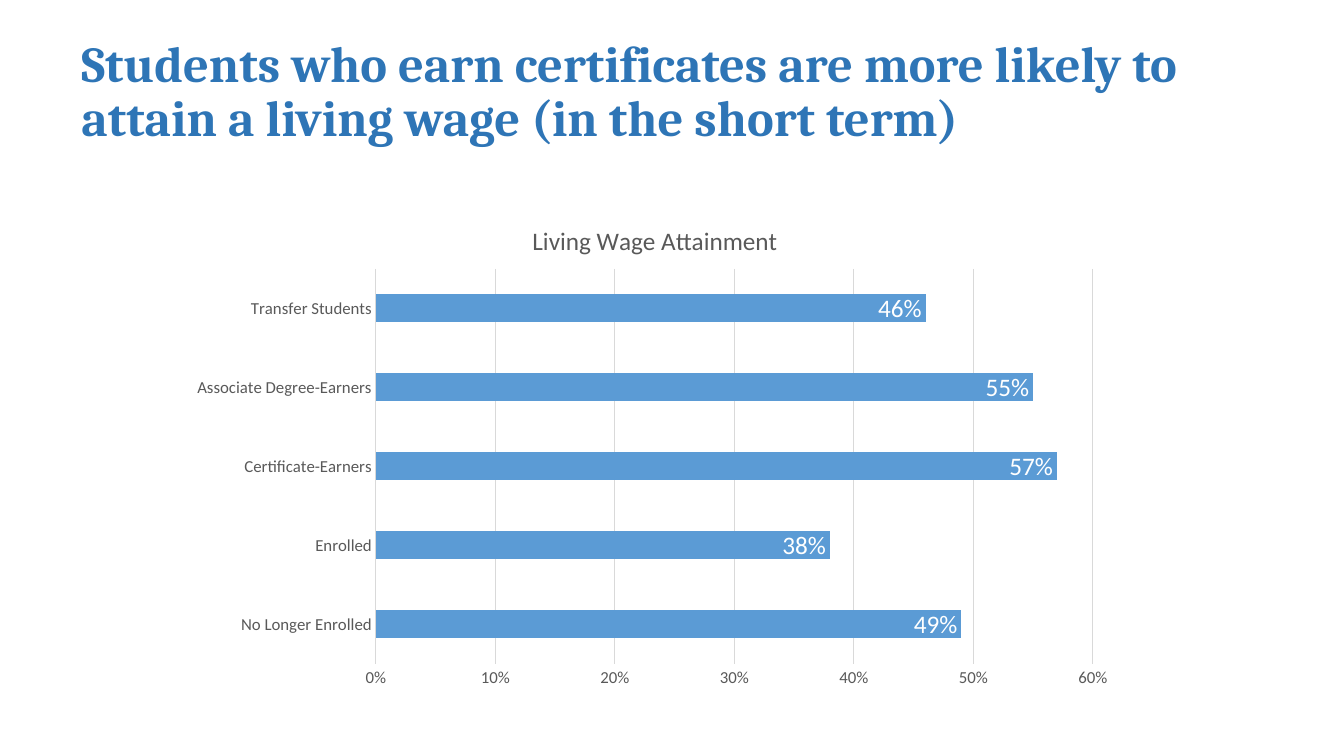
"""Builds a slide with a bar chart of living wage attainment by student group."""
from lxml import etree
from pptx import Presentation, util as u
from pptx.chart.data import CategoryChartData
from pptx.dml.color import RGBColor
from pptx.enum import chart as ch, text
from pptx.oxml.ns import qn

HEADLINE = "Students who earn certificates are more likely to attain a living wage (in the short term)"
HEADLINE_BOX = (0.71, 0.2, 11.5, 1.45)
CHART_TITLE = "Living Wage Attainment"
CHART_BOX = (1.75, 1.92, 9.42, 4.99)
TITLE_LAYOUT = {"xMode": "edge", "yMode": "edge", "x": 0.37, "y": 0.05}
PLOT_LAYOUT = {"layoutTarget": "inner", "xMode": "edge", "yMode": "edge",
               "x": 0.21, "y": 0.15, "w": 0.755, "h": 0.785}
WAGE_SHARES = {
    "No Longer Enrolled": 0.49,
    "Enrolled": 0.38,
    "Certificate-Earners": 0.57,
    "Associate Degree-Earners": 0.55,
    "Transfer Students": 0.46,
}
HEADLINE_BLUE, BAR_BLUE = "2E75B6", "5B9BD5"
GREY, PALE_GREY, WHITE = "595959", "D9D9D9", "FFFFFF"


def paint(color_format, hex_color):
    color_format.rgb = RGBColor.from_string(hex_color)


def style(font, name, size, hex_color, bold=False):
    font.name, font.size, font.bold = name, u.Pt(size), bold
    paint(font.color, hex_color)


def rule(line):
    line.width = u.Pt(0.75)
    paint(line.color, PALE_GREY)


def place(part, position, settings):
    for old_layout in part.findall(qn("c:layout")):
        part.remove(old_layout)
    layout = etree.Element(qn("c:layout"))
    part.insert(position, layout)
    manual = etree.SubElement(layout, qn("c:manualLayout"))
    for key, value in settings.items():
        etree.SubElement(manual, qn(f"c:{key}")).set("val", str(value))


def add_headline(slide):
    frame = slide.shapes.add_textbox(*map(u.Inches, HEADLINE_BOX)).text_frame
    frame.word_wrap = True
    frame.vertical_anchor = text.MSO_ANCHOR.MIDDLE
    paragraph = frame.paragraphs[0]
    paragraph.line_spacing = 0.9
    run = paragraph.add_run()
    run.text = HEADLINE
    style(run.font, "Cambria", 36, HEADLINE_BLUE, bold=True)


def add_wage_chart(slide):
    data = CategoryChartData(number_format="0%")
    data.categories = list(WAGE_SHARES)
    data.add_series("Series 1", list(WAGE_SHARES.values()))
    chart = slide.shapes.add_chart(
        ch.XL_CHART_TYPE.BAR_CLUSTERED, *map(u.Inches, CHART_BOX), data).chart
    style(chart.font, "Calibri", 10, "000000")
    chart.has_legend = False

    chart.has_title = True
    title = chart.chart_title
    run = title.text_frame.paragraphs[0].add_run()
    run.text = CHART_TITLE
    style(run.font, "Calibri", 18, GREY)
    place(title._element, 1, TITLE_LAYOUT)
    place(chart._chartSpace.chart.plotArea, 0, PLOT_LAYOUT)

    groups, shares = chart.category_axis, chart.value_axis
    for axis in (groups, shares):
        axis.major_tick_mark = axis.minor_tick_mark = ch.XL_TICK_MARK.NONE
        style(axis.tick_labels.font, "Calibri", 12, GREY)
    rule(groups.format.line)
    shares.format.line.fill.background()
    shares.has_major_gridlines = True
    rule(shares.major_gridlines.format.line)
    shares.minimum_scale, shares.maximum_scale, shares.major_unit = 0, 0.6, 0.1
    shares.tick_labels.number_format = "0%"
    shares.tick_labels.number_format_is_linked = False

    plot = chart.plots[0]
    plot.gap_width = 182
    plot.vary_by_categories = False
    bars = plot.series[0]
    bars.format.fill.solid()
    paint(bars.format.fill.fore_color, BAR_BLUE)
    labels = bars.data_labels
    labels.show_value = True
    labels.position = ch.XL_LABEL_POSITION.INSIDE_END
    labels.number_format = "0%"
    labels.number_format_is_linked = False
    style(labels.font, "Calibri", 18, WHITE)


def main():
    deck = Presentation()
    deck.slide_width, deck.slide_height = u.Inches(13.33), u.Inches(7.5)
    slide = deck.slides.add_slide(deck.slide_layouts[6])
    add_headline(slide)
    add_wage_chart(slide)
    deck.save("out.pptx")


if __name__ == "__main__":
    main()
